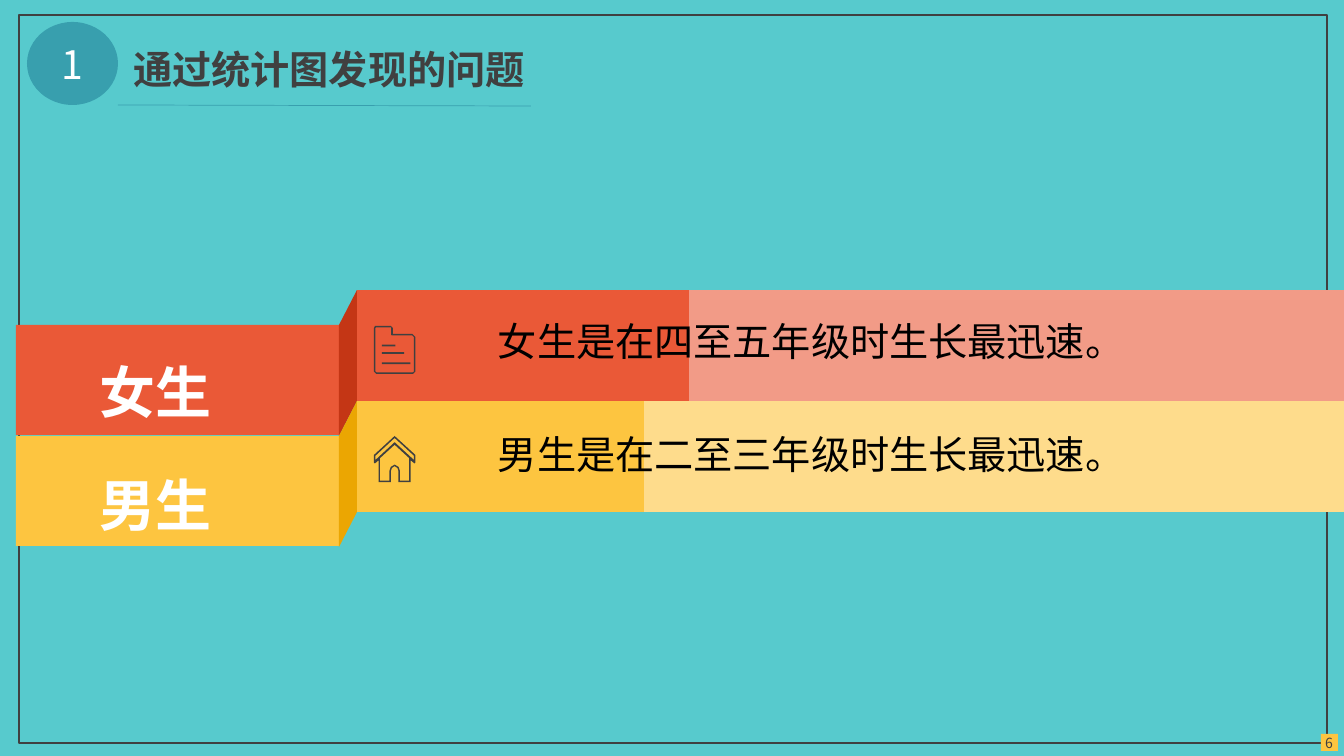
from pptx import Presentation
from pptx import util as u
from pptx.dml.color import RGBColor
from pptx.enum import shapes, text
from pptx.oxml.ns import qn
from lxml import etree

PX = 914400 / 100.8
COLORS = {
    "teal": "57CACD", "deep_teal": "389FAE", "ink": "404040",
    "white": "FFFFFF", "black": "000000",
    "red": "EA5937", "dark_red": "C43615", "pale_red": "F29B87",
    "yellow": "FDC540", "dark_yellow": "EBA602", "pale_yellow": "FEDC8C",
}
HEAD_FONT = "Noto Sans CJK JP"
BODY_FONT = "Noto Sans CJK SC"
RECT = shapes.MSO_SHAPE.RECTANGLE
MIDDLE = text.MSO_ANCHOR.MIDDLE
CENTER = text.PP_ALIGN.CENTER

# Icon outlines in tenths of a px, from the top left corner of the icon.
DOCUMENT = [
    [(10, 0), (170, 0), (190, 20), (190, 80), (385, 80), (415, 110), (415, 455),
     (390, 480), (25, 480), (0, 455), (0, 20)],
    [(15, 20), (15, 455), (28, 465), (387, 465), (400, 455), (400, 112),
     (385, 95), (180, 95), (172, 87), (172, 15), (20, 15)],
]
DOCUMENT += [[(80, top), (80 + width, top), (80 + width, top + 17), (80, top + 17)]
             for top, width in ((187, 135), (262, 222), (365, 285))]
HOUSE = [
    [(0, 190), (207, 0), (415, 190), (415, 265), (405, 275), (367, 243), (367, 462),
     (245, 462), (245, 350), (235, 320), (207, 302), (180, 320), (170, 350),
     (170, 462), (47, 462), (47, 243), (10, 275), (0, 265)],
    [(353, 447), (260, 447), (260, 350), (247, 310), (207, 286), (168, 310),
     (155, 350), (155, 447), (60, 447), (60, 222), (207, 88), (353, 222)],
    [(400, 240), (207, 62), (15, 240), (15, 198), (207, 20), (400, 198)],
]


def px(*lengths):
    return [u.Emu(round(length * PX)) for length in lengths]


def color(name):
    return RGBColor.from_string(COLORS[name])


def write(box, words, size, ink, font=BODY_FONT, bold=False, align=text.PP_ALIGN.LEFT,
          anchor=text.MSO_ANCHOR.TOP, insets=(0, 0, 0, 0), wrap=True):
    """Fill a shape with one formatted line; insets are left, top, right, bottom."""
    frame = box.text_frame
    frame.word_wrap = wrap
    frame.auto_size = text.MSO_AUTO_SIZE.NONE
    frame.vertical_anchor = anchor
    (frame.margin_left, frame.margin_top,
     frame.margin_right, frame.margin_bottom) = px(*insets)
    para = frame.paragraphs[0]
    para.alignment = align
    span = para.add_run()
    span.text = words
    span.font.size = u.Pt(size)
    span.font.bold = bold
    span.font.color.rgb = color(ink)
    span.font.name = font
    east_asian = etree.SubElement(span.font._element, qn("a:ea"))
    east_asian.set("typeface", font)


class Painter:
    def __init__(self, deck):
        self.page = deck.slides.add_slide(deck.slide_layouts[5])
        self.page.background.fill.solid()
        self.page.background.fill.fore_color.rgb = color("teal")

    def paint(self, shape, fill=None, line=None):
        shape.shadow.inherit = False
        if fill:
            shape.fill.solid()
            shape.fill.fore_color.rgb = color(fill)
        else:
            shape.fill.background()
        if line:
            shape.line.color.rgb = color(line)
            shape.line.width = u.Pt(1)
        else:
            shape.line.fill.background()
        return shape

    def shape(self, area, fill=None, line=None, kind=RECT):
        return self.paint(self.page.shapes.add_shape(kind, *px(*area)), fill, line)

    def outline(self, contours, fill, origin=(0, 0), unit=1):
        """Draw closed contours as one shape; later contours may cut holes."""
        first, *others = contours
        builder = self.page.shapes.build_freeform(*first[0], scale=PX * unit)
        builder.add_line_segments(first[1:], close=True)
        for contour in others:
            builder.move_to(*contour[0])
            builder.add_line_segments(contour[1:], close=True)
        return self.paint(builder.convert_to_shape(*px(*origin)), fill)

    def label(self, area, words, size, ink, **style):
        write(self.page.shapes.add_textbox(*px(*area)), words, size, ink, **style)

    def title(self, area, words, **style):
        box = self.page.shapes.title
        box.left, box.top, box.width, box.height = px(*area)
        write(box, words, 28, "ink", font=HEAD_FONT, bold=True, align=CENTER, **style)

    def line(self, start, end, ink, width):
        line = self.page.shapes.add_connector(
            shapes.MSO_CONNECTOR.STRAIGHT, *px(*start, *end))
        line.line.color.rgb = color(ink)
        line.line.width = u.Pt(width)
        etree.SubElement(line._element.spPr, qn("a:effectLst"))

    def ribbon(self, row, hue, split, icon, icon_top, name, finding):
        """Draw a folded band whose strong colour ends at split."""
        pitch, left, fold, right = 111, 339, 357, 1361
        top = 290 + row * pitch
        bottom, drop = top + pitch, 35
        self.shape((fold, top, split - fold, pitch), hue)
        self.shape((16, top + drop, left - 16, pitch - 1), hue)
        self.outline([[(fold, bottom), (left, bottom + drop),
                       (left, top + drop), (fold, top)]], "dark_" + hue)
        self.shape((split, top, right - split, pitch), "pale_" + hue)
        self.outline(icon, "ink", origin=(374, icon_top), unit=0.1)
        text_shift = row * 113
        self.label((488, 317 + text_shift, 923, 57), finding, 28, "black",
                   insets=(10, 0, 10, 0))
        self.label((65, 348 + text_shift, 224, 82), name, 40, "white", font=HEAD_FONT,
                   bold=True, anchor=text.MSO_ANCHOR.BOTTOM, insets=(35, 5, 10, 5))


def main():
    deck = Presentation()
    deck.slide_width, deck.slide_height = px(1344, 756)
    painter = Painter(deck)
    painter.shape((19, 15, 1308, 728), line="ink")
    painter.title((118, 45, 422, 60), "通过统计图发现的问题", insets=(10, 0, 10, 0))
    badge = painter.shape((27, 22, 91, 83), "deep_teal", kind=shapes.MSO_SHAPE.OVAL)
    write(badge, "1", 28, "white", align=CENTER, anchor=MIDDLE)
    painter.line((118, 105), (531, 106), "deep_teal", 0.5)
    painter.shape((1321, 734, 17, 17), "yellow")
    painter.label((1307, 734, 44, 17), "6", 10, "ink", align=CENTER, anchor=MIDDLE)
    painter.ribbon(0, "red", 689, DOCUMENT, 326, "女生", "女生是在四至五年级时生长最迅速。")
    painter.ribbon(1, "yellow", 644, HOUSE, 436, "男生", "男生是在二至三年级时生长最迅速。")
    deck.save("out.pptx")


if __name__ == "__main__":
    main()
